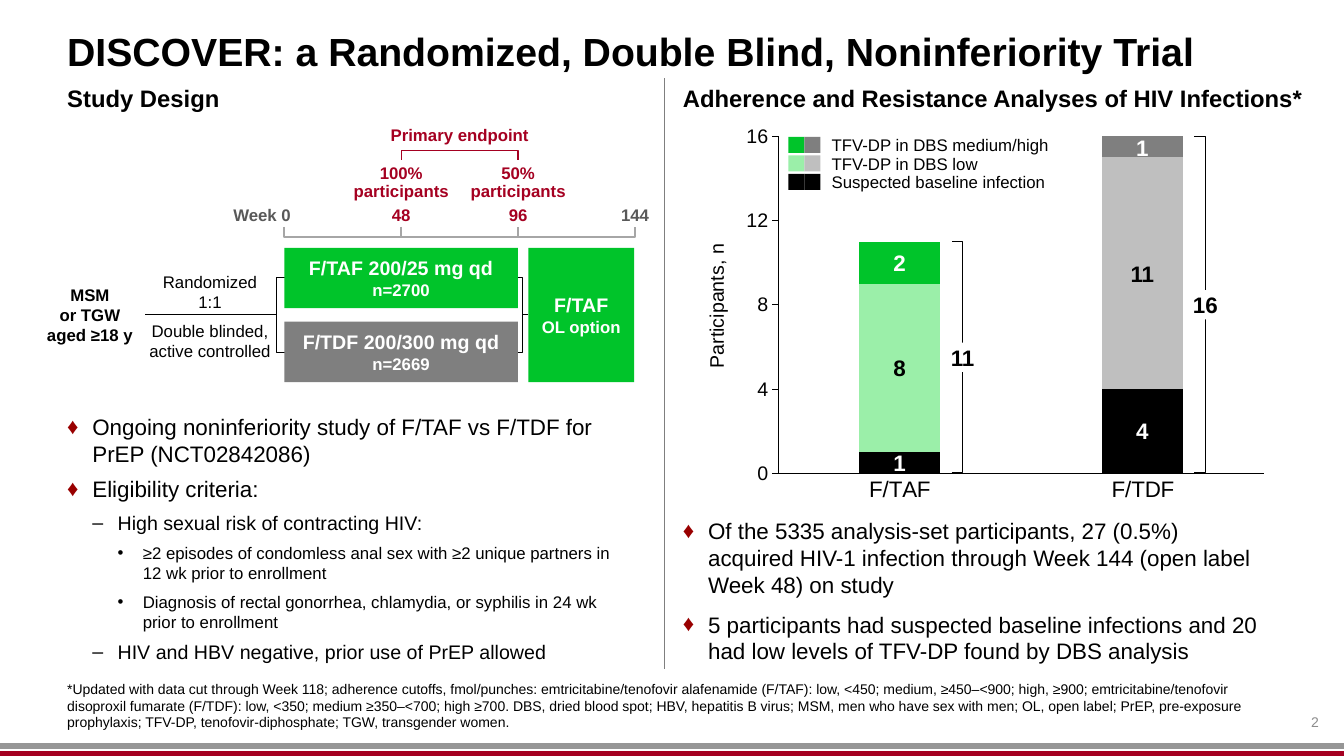
from copy import deepcopy

from lxml.etree import SubElement
from pptx import Presentation
from pptx.chart.data import CategoryChartData
from pptx.dml.color import RGBColor
from pptx.enum.chart import XL_CHART_TYPE, XL_TICK_MARK
from pptx.enum.shapes import MSO_CONNECTOR, MSO_SHAPE
from pptx.enum.text import MSO_ANCHOR, MSO_AUTO_SIZE, PP_ALIGN
from pptx.oxml.ns import qn
from pptx.util import Inches, Pt

BLACK, WHITE = RGBColor(0, 0, 0), RGBColor(255, 255, 255)
CRIMSON, BULLET_RED = RGBColor(0xA5, 0x00, 0x21), RGBColor(0x99, 0x00, 0x00)
GREEN, PALE_GREEN = RGBColor(0x00, 0xC4, 0x2A), RGBColor(0x9B, 0xEF, 0xA9)
GRAY, PALE_GRAY = RGBColor(0x7F, 0x7F, 0x7F), RGBColor(0xBF, 0xBF, 0xBF)
WEEK_GRAY, AXIS_GRAY = RGBColor(0x59, 0x59, 0x59), RGBColor(0xA6, 0xA6, 0xA6)
FOOTER_GRAY, NUMBER_GRAY = RGBColor(0x96, 0x96, 0x96), RGBColor(0x8C, 0x8C, 0x8C)
COLUMNS, ROWS = 160, 90
BULLETS = ((16, "♦", BULLET_RED), (14, "–", BLACK), (12, "•", BLACK))


class TrialSlide:
    """Draws styled elements on one slide laid out as a 160 by 90 grid."""

    font = "Arial"

    def __init__(self, deck, layout):
        self.deck = deck
        self.slide = deck.slides.add_slide(deck.slide_layouts[layout])
        self.shapes = self.slide.shapes

    def x(self, column):
        return round(self.deck.slide_width * column / COLUMNS)

    def y(self, row):
        return round(self.deck.slide_height * row / ROWS)

    def area(self, left, top, width, height):
        return self.x(left), self.y(top), self.x(width), self.y(height)

    def apply(self, target, **formats):
        for attribute, value in formats.items():
            setattr(target, attribute, value)

    def move(self, key, area):
        holder = self.slide.placeholders[key]
        self.apply(holder, **dict(zip(("left", "top", "width", "height"), self.area(*area))))
        return holder

    def frame(self, shape, wrap=False, anchor=MSO_ANCHOR.MIDDLE, inset=0):
        frame = shape.text_frame
        self.apply(frame, word_wrap=wrap, auto_size=MSO_AUTO_SIZE.NONE,
                   vertical_anchor=anchor, margin_left=0, margin_right=0,
                   margin_top=Inches(inset), margin_bottom=Inches(inset))
        return frame

    def style(self, font, size, color, bold=False):
        self.apply(font, name=self.font, size=Pt(size), bold=bold)
        font.color.rgb = color

    def paragraph(self, frame, words, size, color=BLACK, bold=False, **formats):
        used = frame.paragraphs[0]
        paragraph = frame.add_paragraph() if used.runs else used
        paragraph.text = words
        spacing = {"space_before": Pt(0), "space_after": Pt(0), "line_spacing": 1.0}
        self.apply(paragraph, **{**spacing, **formats})
        for run in paragraph.runs:
            self.style(run.font, size, color, bold)
        for line_break in paragraph._p.findall(qn("a:br")):
            line_break.append(deepcopy(paragraph.runs[0]._r.rPr))
        return paragraph

    def text(self, area, words, size=12, color=BLACK, bold=False, align=PP_ALIGN.CENTER,
             wrap=False, anchor=MSO_ANCHOR.MIDDLE, rotation=0, **formats):
        label = self.shapes.add_textbox(*self.area(*area))
        label.rotation = rotation
        frame = self.frame(label, wrap, anchor)
        for part in [words] if isinstance(words, str) else words:
            self.paragraph(frame, part, size, color, bold, alignment=align, **formats)

    def box(self, area, fill, lines=(), color=WHITE):
        box = self.shapes.add_shape(MSO_SHAPE.RECTANGLE, *self.area(*area))
        box.shadow.inherit = False
        box.fill.solid()
        box.fill.fore_color.rgb = fill
        box.line.fill.background()
        frame = self.frame(box)
        for words, size in lines:
            self.paragraph(frame, words, size, color, True, alignment=PP_ALIGN.CENTER)

    def line(self, start, end, color=BLACK, width=0.75):
        rule = self.shapes.add_connector(MSO_CONNECTOR.STRAIGHT, self.x(start[0]),
                                         self.y(start[1]), self.x(end[0]), self.y(end[1]))
        rule.line.color.rgb = color
        rule.line.width = Pt(width)
        SubElement(rule._element.spPr, qn("a:effectLst"))

    def bracket(self, points, color=BLACK, width=0.75):
        start, *rest = [(self.x(column), self.y(row)) for column, row in points]
        builder = self.shapes.build_freeform(*start)
        builder.add_line_segments(rest, close=False)
        bracket = builder.convert_to_shape()
        bracket.shadow.inherit = False
        bracket.fill.background()
        bracket.line.color.rgb = color
        bracket.line.width = Pt(width)

    def heading(self, key, area, words, size):
        frame = self.frame(self.move(key, area))
        self.paragraph(frame, words, size, bold=True, alignment=PP_ALIGN.LEFT)

    def bullets(self, key, area, items, before, after):
        frame = self.frame(self.move(key, area), True, MSO_ANCHOR.TOP, 0.05)
        for level, words in items:
            size, mark, color = BULLETS[level]
            item = self.paragraph(frame, words, size, level=level, alignment=PP_ALIGN.LEFT,
                                  space_before=Pt(before), space_after=Pt(after))
            props = item._p.get_or_add_pPr()
            props.set("marL", str(Inches(0.25) * (level + 1)))
            props.set("indent", str(-Inches(0.25)))
            SubElement(SubElement(props, qn("a:buClr")), qn("a:srgbClr"), val=str(color))
            SubElement(props, qn("a:buFont"), typeface=self.font)
            SubElement(props, qn("a:buChar"), char=mark)

    def stacked_chart(self, area, categories, series, plot):
        data = CategoryChartData()
        data.categories = categories
        for name, counts, _ in series:
            data.add_series(name, counts)
        chart = self.shapes.add_chart(XL_CHART_TYPE.COLUMN_STACKED, *self.area(*area), data).chart
        self.apply(chart, has_legend=False, has_title=False)
        self.style(chart.font, 10, BLACK)
        bars = chart.plots[0]
        self.apply(bars, gap_width=200, overlap=100, vary_by_categories=False)
        for bar, (_, _, fills) in zip(bars.series, series):
            for index, fill in enumerate(fills):
                point = bar.points[index].format.fill
                point.solid()
                point.fore_color.rgb = fill
        self.apply(chart.value_axis, minimum_scale=0, maximum_scale=16, major_unit=4)
        for axis, size, tick in ((chart.category_axis, 16, XL_TICK_MARK.NONE),
                                 (chart.value_axis, 14, XL_TICK_MARK.OUTSIDE)):
            self.apply(axis, has_major_gridlines=False, major_tick_mark=tick,
                       minor_tick_mark=XL_TICK_MARK.NONE)
            self.style(axis.tick_labels.font, size, BLACK)
            axis.format.line.color.rgb = BLACK
            axis.format.line.width = Pt(0.75)
        plot_area = chart._chartSpace.chart.plotArea
        for old in plot_area.findall(qn("c:layout")):
            plot_area.remove(old)
        layout = plot_area.makeelement(qn("c:layout"))
        plot_area.insert(0, layout)
        manual = SubElement(layout, qn("c:manualLayout"))
        settings = {"layoutTarget": "inner", "xMode": "edge", "yMode": "edge",
                    **dict(zip("xywh", plot))}
        for tag, value in settings.items():
            SubElement(manual, qn(f"c:{tag}"), val=str(value))


def week_column(week):
    return 33.85 + 0.29 * week


def count_row(count):
    return 56.28 - 2.5 * count


def draw_design(page):
    page.text((16, 32.3, 18, 10.7), ["Randomized\n1:1", "Double blinded,\nactive controlled"],
              space_after=Pt(6))
    page.text((4.1, 32.6, 13.2, 9.7), ["MSM\nor TGW", "aged ≥18 y"], bold=True)
    page.line((17.3, 37.5), (32.9, 37.5))
    page.line((62.2, 37.5), (62.9, 37.5))
    for spine, tip in ((32.9, 35), (62.2, 61.1)):
        page.bracket([(tip, 33), (spine, 33), (spine, 42), (tip, 42)])
    start, first, second, end = map(week_column, (0, 48, 96, 144))
    page.bracket([(first, 19), (first, 17.9), (second, 17.9), (second, 19)], CRIMSON, 1)
    for left, right in ((start, end), (first, second)):
        page.bracket([(left, 27), (left, 28.2), (right, 28.2), (right, 27)], AXIS_GRAY, 1.5)
    middle = (first + second) / 2
    for center, row, width, words, color in (
            (31.2, 24.4, 7, "Week 0", WEEK_GRAY), (first, 24.4, 2.3, "48", CRIMSON),
            (second, 24.4, 2.3, "96", CRIMSON), (end, 24.4, 3.4, "144", WEEK_GRAY),
            (middle, 14.8, 16.6, "Primary endpoint", CRIMSON)):
        page.text((center - width / 2, row, width, 2.4), words, color=color, bold=True)
    for center, share in ((first, "100%"), (second, "50%")):
        page.text((center - 5.7, 19.6, 11.4, 4.3), f"{share}\nparticipants", color=CRIMSON,
                  bold=True, line_spacing=0.9)
    for row, fill, arm, size in ((29.5, GREEN, "F/TAF 200/25 mg qd", "n=2700"),
                                 (38.3, GRAY, "F/TDF 200/300 mg qd", "n=2669")):
        page.box((start, row, 27.8, 7.2), fill, [(arm, 14), (size, 12)])
    page.box((62.9, 29.5, 12.6, 16), GREEN, [("F/TAF", 14), ("OL option", 12)])


def draw_infections(page):
    series = (("Suspected baseline infection", (1, 4), (BLACK, BLACK)),
              ("TFV-DP in DBS low", (8, 11), (PALE_GREEN, PALE_GRAY)),
              ("TFV-DP in DBS medium/high", (2, 1), (GREEN, GRAY)))
    page.stacked_chart((86.3, 14.3, 66.3, 45.8), ("F/TAF", "F/TDF"), series,
                       (0.096, 0.042, 0.873, 0.877))
    for index, (name, _, fills) in enumerate(reversed(series)):
        row = 16.3 + 2.2 * index
        for side, fill in enumerate(fills):
            page.box((93.85 + 1.92 * side, row, 1.92, 1.92), fill)
        page.text((99, row - 0.24, 26, 2.4), name, align=PP_ALIGN.LEFT)
    page.text((76.6, 34.4, 17.3, 4.1), "Participants, n", 14, rotation=270)
    for arm, center in enumerate((107.1, 136)):
        total = 0
        for _, counts, fills in series:
            color = BLACK if fills[arm] in (PALE_GREEN, PALE_GRAY) else WHITE
            row = count_row(total + counts[arm] / 2)
            page.text((center - 2, row - 1.75, 4, 3.5), str(counts[arm]), 16, color, True)
            total += counts[arm]
        tip, spine = center + 6.2, center + 7.5
        top, base = count_row(total), count_row(0)
        page.bracket([(tip, base), (spine, base), (spine, top), (tip, top)])
        page.box((spine - 1.45, count_row(total / 2) - 1.75, 2.9, 3.5), WHITE,
                 [(str(total), 16)], BLACK)


def main():
    deck = Presentation()
    deck.slide_width, deck.slide_height = Inches(13.33), Inches(7.5)
    page = TrialSlide(deck, 4)
    for row, color in ((88.8, FOOTER_GRAY), (89.8, CRIMSON)):
        page.line((0, row), (COLUMNS, row), color, 4.25)
    page.heading(0, (8, 2.8, 137.2, 6.6),
                 "DISCOVER: a Randomized, Double Blind, Noninferiority Trial", 28)
    page.heading(1, (8, 9.3, 18.4, 4.7), "Study Design", 17)
    page.heading(3, (81.3, 9.3, 74.4, 4.7),
                 "Adherence and Resistance Analyses of HIV Infections*", 17)
    draw_design(page)
    draw_infections(page)
    page.line((79.1, 9.3), (79.1, 79.6), GRAY)
    page.bullets(2, (8, 48.6, 66.4, 31.3), (
        (0, "Ongoing noninferiority study of F/TAF vs F/TDF for PrEP (NCT02842086)"),
        (0, "Eligibility criteria:"),
        (1, "High sexual risk of contracting HIV:"),
        (2, "≥2 episodes of condomless anal sex with ≥2 unique partners in 12 wk prior to enrollment"),
        (2, "Diagnosis of rectal gonorrhea, chlamydia, or syphilis in 24 wk prior to enrollment"),
        (1, "HIV and HBV negative, prior use of PrEP allowed")), 3, 3)
    page.bullets(4, (81.3, 61, 69.8, 18.8), (
        (0, "Of the 5335 analysis-set participants, 27 (0.5%) acquired HIV-1 infection through "
            "Week 144 (open label Week 48) on study"),
        (0, "5 participants had suspected baseline infections and 20 had low levels of TFV-DP "
            "found by DBS analysis")), 9, 0)
    page.text((8, 81, 144, 6), (
        "*Updated with data cut through Week 118; adherence cutoffs, fmol/punches: "
        "emtricitabine/tenofovir alafenamide (F/TAF): low, <450; medium, ≥450–<900; high, ≥900; "
        "emtricitabine/tenofovir disoproxil fumarate (F/TDF): low, <350; medium ≥350–<700; high "
        "≥700. DBS, dried blood spot; HBV, hepatitis B virus; MSM, men who have sex with men; "
        "OL, open label; PrEP, pre-exposure prophylaxis; TFV-DP, tenofovir-diphosphate; "
        "TGW, transgender women."), 10, align=PP_ALIGN.LEFT, wrap=True, anchor=MSO_ANCHOR.BOTTOM)
    page.text((152, 82.2, 5, 4.8), "2", 10, NUMBER_GRAY, align=PP_ALIGN.RIGHT,
              anchor=MSO_ANCHOR.BOTTOM)
    deck.save("out.pptx")


if __name__ == "__main__":
    main()
